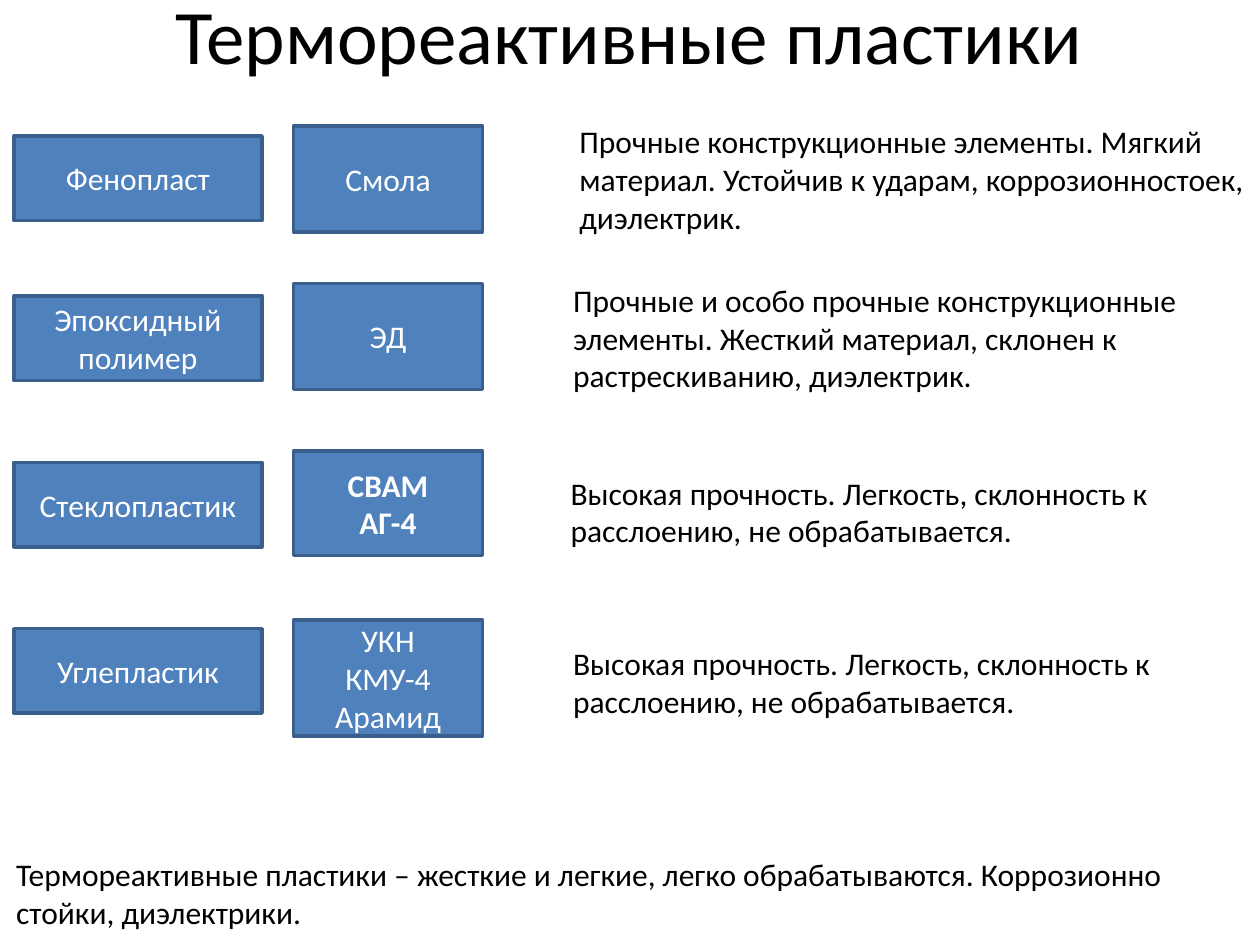
from pptx import Presentation
from pptx.dml.color import RGBColor
from pptx.enum.shapes import MSO_SHAPE
from pptx.enum.text import MSO_ANCHOR, MSO_AUTO_SIZE, PP_ALIGN
from pptx.util import Pt

PX = 9144
FONT = "Calibri"
COLORS = {"fill": "4F81BD", "line": "3A5F8C", "light": "FFFFFF", "dark": "000000"}
RECTANGLE = MSO_SHAPE.RECTANGLE
MIDDLE, TOP = MSO_ANCHOR.MIDDLE, MSO_ANCHOR.TOP
GROW = MSO_AUTO_SIZE.SHAPE_TO_FIT_TEXT
NO_FIT = MSO_AUTO_SIZE.NONE
CENTER, LEFT = PP_ALIGN.CENTER, PP_ALIGN.LEFT

MATERIAL_LEFT, MATERIAL_WIDTH, MATERIAL_HEIGHT = 11, 197, 67
GRADE_LEFT, GRADE_WIDTH = 233, 150
LAMINATE = "Высокая прочность. Легкость, склонность к расслоению, не обрабатывается."
ROWS = [
    {"material": ("Фенопласт", 108), "grade": ("Смола", 100, 84),
     "note": ("Прочные конструкционные элементы. Мягкий материал. "
              "Устойчив к ударам, коррозионностоек, диэлектрик.", (450, 92, 558, 101))},
    {"material": ("Эпоксидный полимер", 235), "grade": ("ЭД", 225, 84),
     "note": ("Прочные и особо прочные конструкционные элементы. "
              "Жесткий материал, склонен к растрескиванию, диэлектрик.", (445, 218, 555, 101))},
    {"material": ("Стеклопластик", 367), "grade": ("СВАМ\nАГ-4", 358, 83), "bold": True,
     "note": (LAMINATE, (443, 371, 550, 71))},
    {"material": ("Углепластик", 499), "grade": ("УКН\nКМУ-4\nАрамид", 492, 92),
     "note": (LAMINATE, (445, 506, 550, 71))},
]
SUMMARY = ("Термореактивные пластики – жесткие и легкие, легко обрабатываются. "
           "Коррозионно стойки, диэлектрики.")


def emu(box):
    """Turn a box in px into EMU."""
    return [value * PX for value in box]


def write(shape, text, size, color, align, anchor, bold=False):
    """Set the text of a shape and format its runs."""
    frame = shape.text_frame
    frame.text = text
    frame.word_wrap = True
    frame.vertical_anchor = anchor
    for para in frame.paragraphs:
        para.alignment = align
        for span in para.runs:
            span.font.name = FONT
            span.font.size = Pt(size)
            span.font.bold = bold
            span.font.color.rgb = RGBColor.from_string(COLORS[color])


def add_title(page, text, box):
    """Place and format the title placeholder."""
    title = page.shapes.title
    title.left, title.top, title.width, title.height = emu(box)
    write(title, text, 44, "dark", CENTER, MIDDLE)
    title.text_frame.auto_size = NO_FIT


def add_block(page, text, box, bold=False):
    """Add a filled rectangle with centred text."""
    block = page.shapes.add_shape(RECTANGLE, *emu(box))
    block.shadow.inherit = False
    block.fill.solid()
    block.fill.fore_color.rgb = RGBColor.from_string(COLORS["fill"])
    block.line.color.rgb = RGBColor.from_string(COLORS["line"])
    block.line.width = Pt(2)
    write(block, text, 18, "light", CENTER, MIDDLE, bold)


def add_note(page, text, box):
    """Add a wrapping text box."""
    note = page.shapes.add_textbox(*emu(box))
    write(note, text, 18, "dark", LEFT, TOP)
    note.text_frame.auto_size = GROW


def add_row(page, row):
    """Add a material, its grades and its properties."""
    material, material_top = row["material"]
    grade, grade_top, grade_height = row["grade"]
    add_block(page, material, (MATERIAL_LEFT, material_top, MATERIAL_WIDTH, MATERIAL_HEIGHT))
    add_block(page, grade, (GRADE_LEFT, grade_top, GRADE_WIDTH, grade_height), row.get("bold", False))
    add_note(page, *row["note"])


def main():
    """Build the slide and save the deck."""
    deck = Presentation()
    deck.slide_width, deck.slide_height = emu((1000, 750))
    page = deck.slides.add_slide(deck.slide_layouts[5])
    add_title(page, "Термореактивные пластики", (50, -17, 900, 87))
    for row in ROWS:
        add_row(page, row)
    add_note(page, SUMMARY, (3, 674, 979, 71))
    deck.save("out.pptx")


if __name__ == "__main__":
    main()
